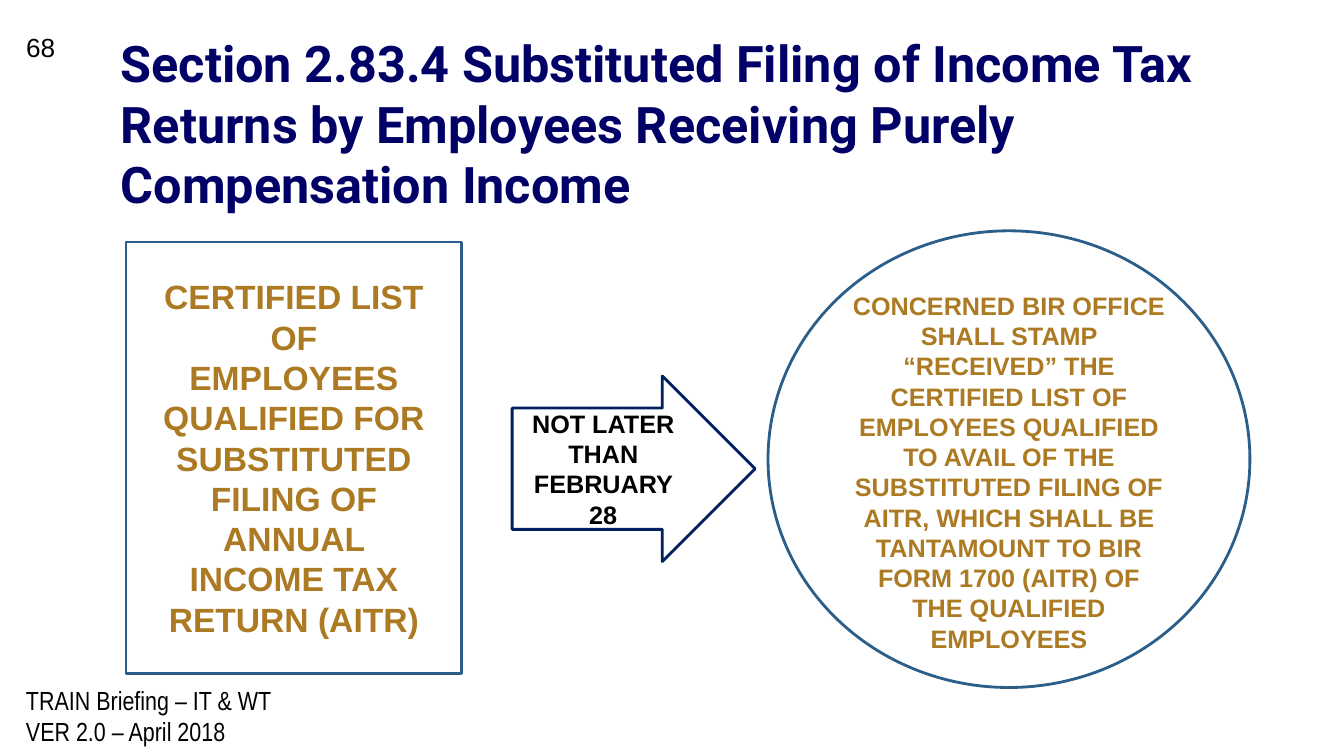
import pptx
import pptx.util
import pptx.dml.color
import pptx.enum.shapes
import pptx.enum.text

Pt = pptx.util.Pt
Color = pptx.dml.color.RGBColor
Shape = pptx.enum.shapes.MSO_SHAPE
Align = pptx.enum.text.PP_ALIGN
Anchor = pptx.enum.text.MSO_ANCHOR

BLACK = Color(0x00, 0x00, 0x00)
WHITE = Color(0xFF, 0xFF, 0xFF)
TITLE_NAVY = Color(0x00, 0x00, 0x66)
ARROW_NAVY = Color(0x00, 0x20, 0x60)
OUTLINE_BLUE = Color(0x2B, 0x5F, 0x8A)
GOLD = Color(0xAB, 0x7A, 0x22)

CERTIFIED_LIST = (
    "CERTIFIED LIST OF EMPLOYEES QUALIFIED FOR SUBSTITUTED FILING OF "
    "ANNUAL INCOME TAX RETURN (AITR)"
)
STAMPED_LIST = (
    "CONCERNED BIR OFFICE SHALL STAMP “RECEIVED” THE CERTIFIED LIST OF "
    "EMPLOYEES QUALIFIED TO AVAIL OF THE SUBSTITUTED FILING OF AITR, WHICH "
    "SHALL BE TANTAMOUNT TO BIR FORM 1700 (AITR) OF THE QUALIFIED EMPLOYEES"
)


def write(frame, lines, size, color, font="Arial", bold=False, align=Align.LEFT):
    """Fill a text frame with one paragraph for each line."""
    frame.word_wrap = True
    for index, line in enumerate(lines):
        para = frame.paragraphs[0] if index == 0 else frame.add_paragraph()
        para.text = line
        para.alignment = align
        para.font.name = font
        para.font.size = Pt(size)
        para.font.bold = bold
        para.font.color.rgb = color


def add_text(page, left, top, width, height, lines, size, color, **style):
    box = page.shapes.add_textbox(Pt(left), Pt(top), Pt(width), Pt(height))
    write(box.text_frame, lines, size, color, **style)
    return box


def add_outline(page, kind, left, top, width, height, color):
    shape = page.shapes.add_shape(kind, Pt(left), Pt(top), Pt(width), Pt(height))
    shape.shadow.inherit = False
    shape.fill.background()
    shape.line.color.rgb = color
    shape.line.width = Pt(2)
    return shape


def add_step(page, kind, left, top, width, height, text, size, side, drop, text_height):
    """Draw an outline with gold text inset from its sides and top."""
    add_outline(page, kind, left, top, width, height, OUTLINE_BLUE)
    add_text(page, left + side, top + drop, width - 2 * side, text_height,
             [text], size, GOLD, bold=True, align=Align.CENTER)


def add_deadline_arrow(page, left, top, width, height):
    arrow = add_outline(page, Shape.RIGHT_ARROW, left, top, width, height, ARROW_NAVY)
    arrow.adjustments[0] = 0.654
    arrow.adjustments[1] = 0.5
    arrow.fill.solid()
    arrow.fill.fore_color.rgb = WHITE
    frame = arrow.text_frame
    frame.vertical_anchor = Anchor.MIDDLE
    write(frame, ["NOT LATER THAN FEBRUARY 28"], 18, BLACK, bold=True, align=Align.CENTER)


def add_heading(page, left, top, width, height, text, size, color, **style):
    frame = add_text(page, left, top, width, height, [text], size, color, **style).text_frame
    frame.margin_left = frame.margin_right = Pt(7.2)
    frame.margin_top = frame.margin_bottom = Pt(7.2)


def main():
    deck = pptx.Presentation()
    deck.slide_width, deck.slide_height = Pt(960), Pt(540)
    page = deck.slides.add_slide(deck.slide_layouts[6])

    add_text(page, 11.5, 485.3, 201.6, 54,
             ["TRAIN Briefing – IT & WT", "VER 2.0 – April 2018"],
             18.7, BLACK, font="Arial Narrow", align=Align.JUSTIFY)
    add_step(page, Shape.RECTANGLE, 90, 172.8, 239.8, 308.2,
             CERTIFIED_LIST, 24, side=18.9, drop=20.9, text_height=240)
    add_step(page, Shape.OVAL, 548.6, 164.9, 344.2, 326.2,
             STAMPED_LIST, 18, side=52, drop=38.9, text_height=269)
    add_deadline_arrow(page, 365.8, 268.6, 173.5, 132.5)
    add_heading(page, 11.5, 15.1, 190, 131.8, "68", 18.7, BLACK)
    add_heading(page, 79.2, 15.8, 815.8, 96.5,
                "Section 2.83.4 Substituted Filing of Income Tax Returns by "
                "Employees Receiving Purely Compensation Income",
                36, TITLE_NAVY, font="Roboto", bold=True)
    deck.save("out.pptx")


if __name__ == "__main__":
    main()
